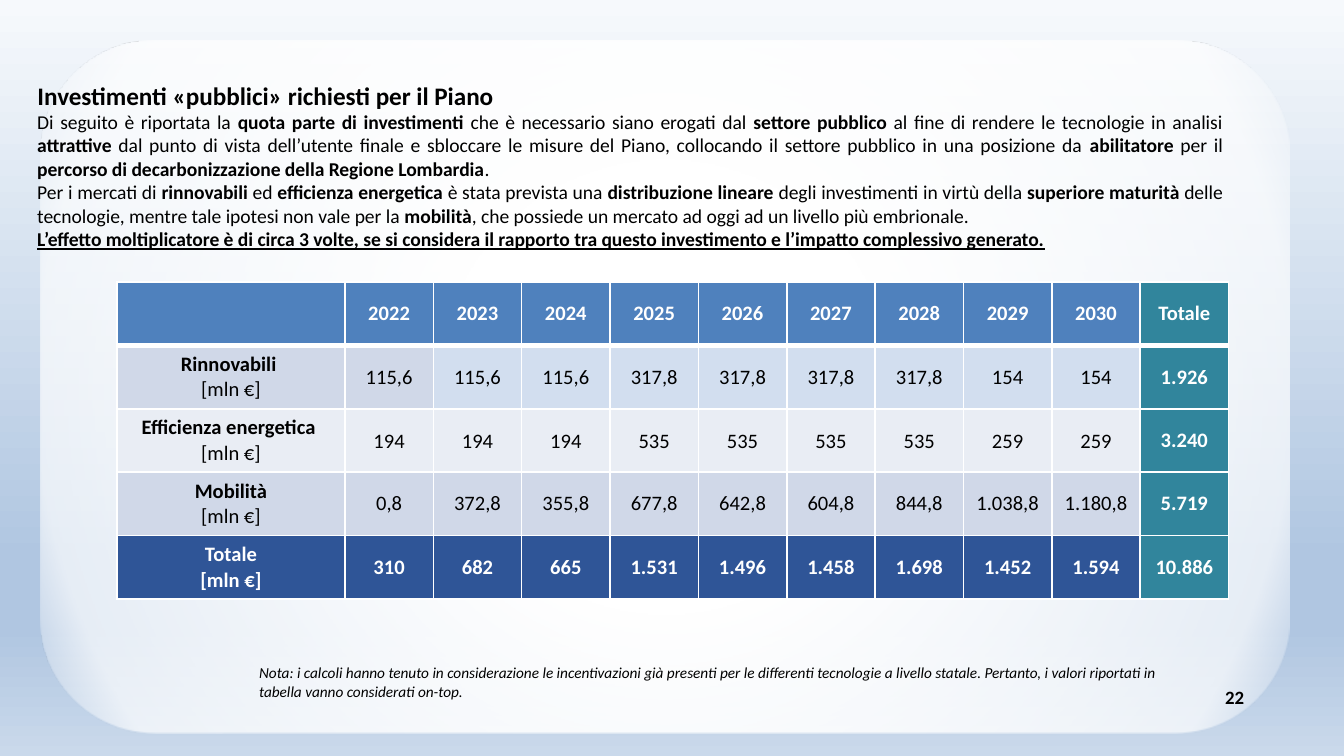
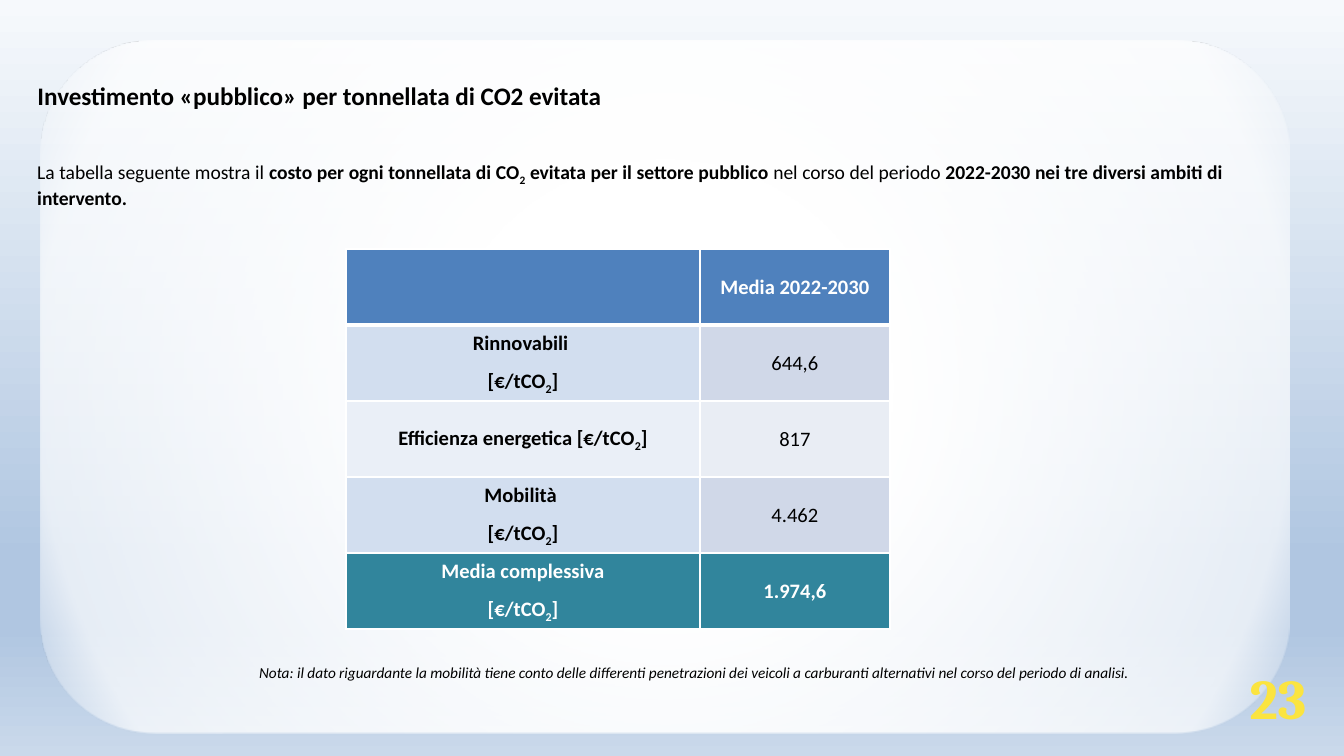
"""Build two slides on the public investment required by the regional plan."""
from lxml import etree
from pptx import Presentation
from pptx.dml.color import RGBColor
from pptx.enum.shapes import MSO_SHAPE
from pptx.enum.text import MSO_ANCHOR, PP_ALIGN
from pptx.oxml import parse_xml
from pptx.oxml.ns import nsdecls, qn
from pptx.util import Pt

LEFT, CENTER, JUSTIFY = PP_ALIGN.LEFT, PP_ALIGN.CENTER, PP_ALIGN.JUSTIFY
MIDDLE = MSO_ANCHOR.MIDDLE
ROUNDED = MSO_SHAPE.ROUNDED_RECTANGLE
PX = 6804
COLORS = {
    "black": "000000", "white": "FFFFFF", "yellow": "FBE440",
    "header": "4F81BD", "teal": "31859C", "navy": "2F5597",
    "band": "D0D8E8", "light": "E9EDF4", "sky": "D2DEEF", "pale": "EAEFF7",
    "sky_top": "F6F9FC", "sky_deep": "B0C6E1", "sky_low": "CAD9EB",
}


def gradient_fill(properties, stops, direction):
    """Replace the solid fill in properties by a gradient."""
    marks = "".join(
        f'<a:gs pos="{position * 1000}"><a:srgbClr val="{COLORS[color]}">'
        f'<a:alpha val="{opacity * 1000}"/></a:srgbClr></a:gs>'
        for position, color, opacity in stops)
    gradient = parse_xml(f'<a:gradFill {nsdecls("a")} rotWithShape="1">'
                         f'<a:gsLst>{marks}</a:gsLst>{direction}</a:gradFill>')
    properties.replace(properties.find(qn("a:solidFill")), gradient)


def write(frame, paragraphs, size, color="black", align=LEFT, font="Calibri",
          line_spacing=None, space_after=None):
    """Write paragraphs of (text, style) runs; styles: b, i, u, s for subscript."""
    frame.word_wrap = True
    for index, runs in enumerate(paragraphs):
        paragraph = frame.add_paragraph() if index else frame.paragraphs[0]
        paragraph.alignment = align
        paragraph.line_spacing = line_spacing
        paragraph.space_before = Pt(0)
        paragraph.space_after = space_after
        for text, style in runs:
            run = paragraph.add_run()
            run.text = text
            run.font.name = font
            run.font.size = Pt(size)
            run.font.bold = "b" in style
            run.font.italic = "i" in style
            run.font.underline = "u" in style
            run.font.color.rgb = RGBColor.from_string(COLORS[color])
            if "s" in style:
                run._r.get_or_add_rPr().set("baseline", "-25000")


unit = [("[mln €]", "")]
unit_bold = [("[mln €]", "b")]
per_tonne = [("[€/tCO", "b"), ("2", "bs"), ("]", "b")]
years = [str(year) for year in range(2022, 2031)]

pages = [
    {
        "title": "Investimenti «pubblici» richiesti per il Piano",
        "number": ("22", 10.1, "black", LEFT, "Calibri"),
        "body_top": 103,
        "body": [
            [("Di seguito è riportata la ", ""),
             ("quota parte di investimenti ", "b"),
             ("che è necessario siano erogati dal ", ""),
             ("settore pubblico", "b"),
             (" al fine di rendere le tecnologie in analisi ", ""),
             ("attrattive", "b"),
             (" dal punto di vista dell’utente finale e sbloccare le misure del "
              "Piano, collocando il settore pubblico in una posizione da ", ""),
             ("abilitatore", "b"),
             (" per il ", ""),
             ("percorso di decarbonizzazione della Regione Lombardia", "b"),
             (". ", "")],
            [("Per i mercati di ", ""),
             ("rinnovabili", "b"),
             (" ed ", ""),
             ("efficienza energetica ", "b"),
             ("è stata prevista una ", ""),
             ("distribuzione lineare ", "b"),
             ("degli investimenti in virtù della ", ""),
             ("superiore maturità ", "b"),
             ("delle tecnologie, mentre tale ipotesi non vale per la ", ""),
             ("mobilità", "b"),
             (", che possiede un mercato ad oggi ad un livello più "
              "embrionale.", "")],
            [("L’effetto moltiplicatore è di circa 3 volte, se si considera il "
              "rapporto tra questo investimento e l’impatto complessivo "
              "generato.", "bu")],
        ],
        "note": "Nota: i calcoli hanno tenuto in considerazione le incentivazioni "
                "già presenti per le differenti tecnologie a livello statale. "
                "Pertanto, i valori riportati in tabella vanno considerati on-top.",
        "note_height": 51,
        "table_box": (117, 282, 1112, 317),
        "label_width": 228,
        "margins": (9, 5),
        "spacing": (None, None),
        "rows": [
            ([], years + ["Totale"], ["header"] * 10 + ["teal"]),
            ([[("Rinnovabili ", "b")], unit],
             ["115,6"] * 3 + ["317,8"] * 4 + ["154"] * 2 + ["1.926"],
             ["band"] * 2 + ["sky"] * 8 + ["teal"]),
            ([[("Efficienza energetica ", "b")], unit],
             ["194"] * 3 + ["535"] * 4 + ["259"] * 2 + ["3.240"],
             ["light"] * 10 + ["teal"]),
            ([[("Mobilità", "b")], unit],
             ["0,8", "372,8", "355,8", "677,8", "642,8", "604,8", "844,8",
              "1.038,8", "1.180,8", "5.719"],
             ["band"] * 10 + ["teal"]),
            ([[("Totale", "b")], unit_bold],
             ["310", "682", "665", "1.531", "1.496", "1.458", "1.698", "1.452",
              "1.594", "10.886"],
             ["navy"] * 10 + ["teal"]),
        ],
    },
    {
        "title": "Investimento «pubblico» per tonnellata di CO2 evitata",
        "number": ("23", 30, "yellow", CENTER, "Cambria"),
        "body_top": 153,
        "body": [
            [("La tabella seguente mostra il ", ""),
             ("costo per ogni tonnellata di CO", "b"),
             ("2", "bs"),
             (" evitata per il settore pubblico ", "b"),
             ("nel corso del periodo ", ""),
             ("2022-2030 nei tre diversi ambiti di intervento.", "b")],
        ],
        "note": "Nota: il dato riguardante la mobilità tiene conto delle differenti "
                "penetrazioni dei veicoli a carburanti alternativi nel corso del "
                "periodo di analisi.",
        "note_height": 32,
        "table_box": (346, 249, 544, 380),
        "label_width": 354,
        "margins": (8, 0),
        "spacing": (1.07, Pt(6)),
        "rows": [
            ([], ["Media 2022-2030"], ["header"] * 2),
            ([[("Rinnovabili ", "b")], per_tonne], ["644,6"], ["sky", "band"]),
            ([[("Efficienza energetica ", "b")] + per_tonne], ["817"],
             ["pale", "light"]),
            ([[("Mobilità ", "b")], per_tonne], ["4.462"], ["sky", "band"]),
            ([[("Media complessiva", "b")], per_tonne], ["1.974,6"],
             ["teal"] * 2),
        ],
    },
]

presentation = Presentation()
presentation.slide_width = 1344 * PX
presentation.slide_height = 756 * PX

background = presentation.slide_master.background
background.fill.solid()
gradient_fill(
    background._cSld.find(f'{qn("p:bg")}/{qn("p:bgPr")}'),
    [(0, "sky_top", 100), (74, "sky_deep", 100), (83, "sky_deep", 100),
     (100, "sky_low", 100)],
    '<a:lin ang="5400000" scaled="0"/>')

for page in pages:
    slide = presentation.slides.add_slide(presentation.slide_layouts[5])

    panel = slide.shapes.add_shape(ROUNDED, 41 * PX, 41 * PX, 1248 * PX, 692 * PX)
    panel.shadow.inherit = False
    panel.line.fill.background()
    panel.fill.solid()
    gradient_fill(
        panel.element.spPr,
        [(0, "white", 100), (31, "white", 100), (88, "white", 68),
         (100, "white", 0)],
        '<a:path path="circle">'
        '<a:fillToRect l="50000" t="50000" r="50000" b="50000"/></a:path>')
    slide.shapes.element.insert(2, panel.element)

    title = slide.shapes.title
    title.left, title.top = 24 * PX, 22 * PX
    title.width, title.height = 1187 * PX, 146 * PX
    title.text_frame.vertical_anchor = MIDDLE
    write(title.text_frame, [[(page["title"], "b")]], 13.5)

    number, size, color, align, font = page["number"]
    number_box = slide.shapes.add_textbox(1212 * PX, 642 * PX, 132 * PX, 110 * PX)
    number_box.text_frame.vertical_anchor = MIDDLE
    write(number_box.text_frame, [[(number, "b")]], size, color, align, font)

    left, top, width, height = [value * PX for value in page["table_box"]]
    rows = page["rows"]
    column_count = len(rows[0][2])
    table = slide.shapes.add_table(
        len(rows), column_count, left, top, width, height).table
    table.horz_banding = False
    label_width = page["label_width"] * PX
    for index, column in enumerate(table.columns):
        column.width = (width - label_width) // (column_count - 1)
        if index == 0:
            column.width = label_width
    line_spacing, space_after = page["spacing"]
    for row_index, (label, values, fills) in enumerate(rows):
        table.rows[row_index].height = height // len(rows)
        contents = [label] + [[[(value, "")]] for value in values]
        for column_index, (content, fill) in enumerate(zip(contents, fills)):
            cell = table.cell(row_index, column_index)
            cell.vertical_anchor = MIDDLE
            horizontal, vertical = page["margins"]
            cell.margin_left = cell.margin_right = horizontal * PX
            cell.margin_top = cell.margin_bottom = vertical * PX
            if row_index in (1, 2, 4) and 0 < column_index < 10 < column_count:
                cell.margin_left = cell.margin_right = cell.margin_top = PX
                cell.margin_bottom = 0
            properties = cell._tc.get_or_add_tcPr()
            for side in ("lnL", "lnR", "lnT", "lnB"):
                heavy = (row_index, side) in ((0, "lnB"), (1, "lnT"))
                border = etree.SubElement(properties, qn(f"a:{side}"),
                                          w=str(Pt(3 if heavy else 1)))
                border_fill = etree.SubElement(border, qn("a:solidFill"))
                etree.SubElement(border_fill, qn("a:srgbClr"), val=COLORS["white"])
            cell.fill.solid()
            cell.fill.fore_color.rgb = RGBColor.from_string(COLORS[fill])
            dark = fill in ("header", "teal", "navy")
            if dark:
                content = [[(text, style.replace("b", "") + "b")
                            for text, style in runs] for runs in content]
            write(cell.text_frame, content, 11, "white" if dark else "black",
                  CENTER, line_spacing=line_spacing, space_after=space_after)

    note_box = slide.shapes.add_textbox(
        246 * PX, 657 * PX, 965 * PX, page["note_height"] * PX)
    write(note_box.text_frame, [[(page["note"], "i")]], 8.2)

    body_box = slide.shapes.add_textbox(
        24 * PX, page["body_top"] * PX, 1212 * PX, 122 * PX)
    write(body_box.text_frame, page["body"], 10.5, align=JUSTIFY)

presentation.save("out.pptx")
